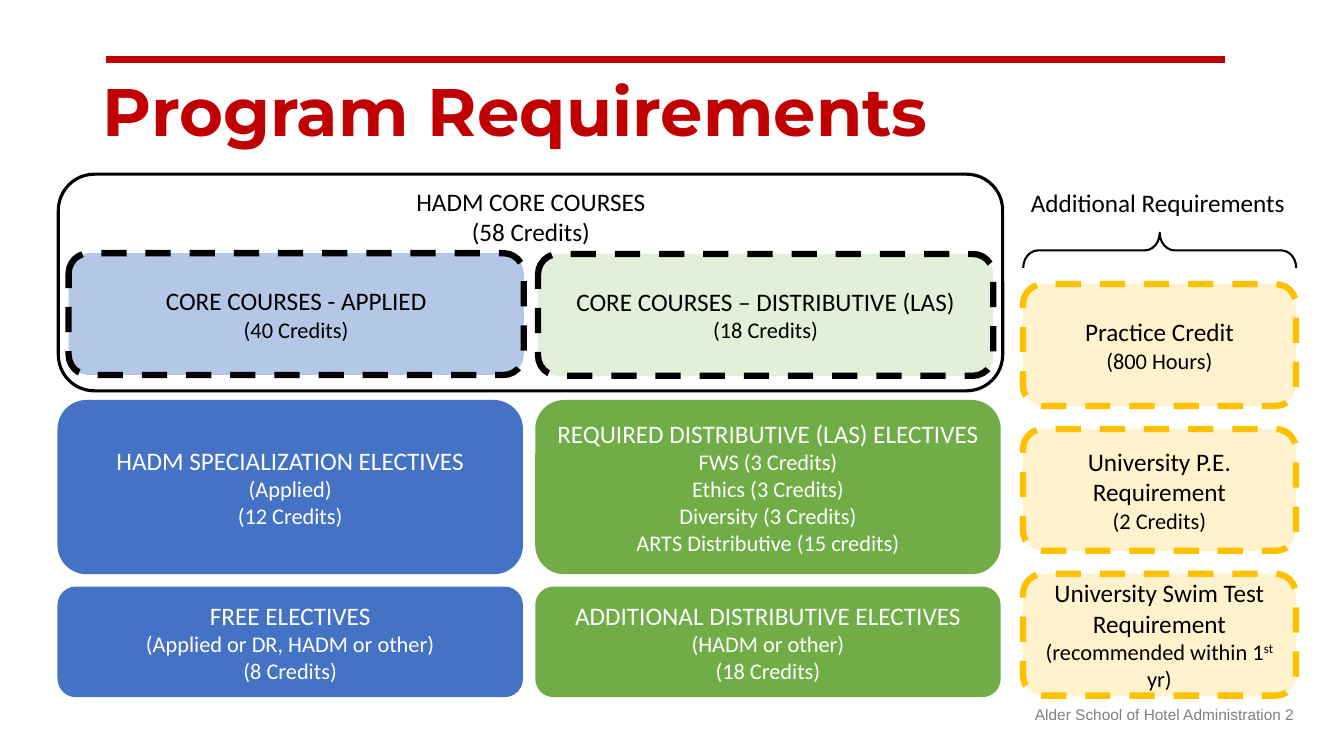
from dataclasses import dataclass

from pptx import Presentation
from pptx.dml.color import RGBColor
from pptx.enum.dml import MSO_LINE
from pptx.enum.shapes import MSO_CONNECTOR, MSO_SHAPE
from pptx.enum.text import MSO_ANCHOR, PP_ALIGN
from pptx.oxml.ns import qn
from pptx.util import Cm, Pt

ROUNDED, BRACE = MSO_SHAPE.ROUNDED_RECTANGLE, MSO_SHAPE.LEFT_BRACE
STRAIGHT = MSO_CONNECTOR.STRAIGHT
DASH = MSO_LINE.DASH
TOP, MIDDLE = MSO_ANCHOR.TOP, MSO_ANCHOR.MIDDLE
LEFT, CENTER, RIGHT = PP_ALIGN.LEFT, PP_ALIGN.CENTER, PP_ALIGN.RIGHT


@dataclass(frozen=True)
class Theme:
    red: str = "C00000"
    black: str = "000000"
    white: str = "FFFFFF"
    gray: str = "808080"
    blue: str = "4472C4"
    pale_blue: str = "B4C7E7"
    green: str = "70AD47"
    pale_green: str = "E2F0D9"
    gold: str = "FFC000"
    pale_gold: str = "FFF2CC"
    title_font: str = "Montserrat"
    body_font: str = "Calibri"
    footer_font: str = "Arial"
    title_size: int = 48
    heading_size: int = 18
    detail_size: int = 16
    footer_size: int = 11


THEME = Theme()


def write(frame, lines, color=THEME.black, font=THEME.body_font, size=THEME.heading_size,
          detail_size=None, bold=False, align=CENTER, anchor=TOP, spacing=None, wrap=True):
    frame.word_wrap = wrap
    frame.vertical_anchor = anchor
    for index, line in enumerate(lines):
        paragraph = frame.add_paragraph() if index else frame.paragraphs[0]
        paragraph.alignment = align
        if spacing:
            paragraph.line_spacing = spacing
        pieces = (line,) if isinstance(line, str) else line
        for position, piece in enumerate(pieces):
            run = paragraph.add_run()
            run.text = piece
            run.font.name = font
            run.font.size = Pt(detail_size if index and detail_size else size)
            run.font.bold = bold
            run.font.color.rgb = RGBColor.from_string(color)
            if position % 2:
                run.font._element.set("baseline", "30000")


class RequirementsSlide:
    def __init__(self, slide, theme):
        self.slide = slide
        self.theme = theme

    def text(self, left, top, width, height, lines, **style):
        label = self.slide.shapes.add_textbox(Cm(left), Cm(top), Cm(width), Cm(height))
        write(label.text_frame, lines, **style)

    def rule(self, left, right, y, color, weight):
        rule = self.slide.shapes.add_connector(STRAIGHT, Cm(left), Cm(y), Cm(right), Cm(y))
        rule.line.color.rgb = RGBColor.from_string(color)
        rule.line.width = Pt(weight)
        rule._element.spPr.append(rule._element.makeelement(qn("a:effectLst"), {}))

    def box(self, left, top, width, height, fill, lines=(), color=THEME.black,
            outline=None, weight=4.5, dash=DASH):
        box = self.slide.shapes.add_shape(ROUNDED, Cm(left), Cm(top), Cm(width), Cm(height))
        box.shadow.inherit = False
        box.fill.solid()
        box.fill.fore_color.rgb = RGBColor.from_string(fill)
        if outline:
            box.line.color.rgb = RGBColor.from_string(outline)
            box.line.width = Pt(weight)
            box.line.dash_style = dash
        else:
            box.line.fill.background()
        write(box.text_frame, lines, color=color, anchor=MIDDLE,
              detail_size=self.theme.detail_size)

    def brace(self, left, top, width, height):
        brace = self.slide.shapes.add_shape(BRACE, Cm(left), Cm(top), Cm(width), Cm(height))
        brace.rotation = 90
        brace.adjustments[0] = 0.42
        brace.shadow.inherit = False
        brace.fill.background()
        brace.line.color.rgb = RGBColor.from_string(self.theme.black)
        brace.line.width = Pt(1.5)


ELECTIVES = (
    (THEME.blue, (
        ("HADM SPECIALIZATION ELECTIVES", "(Applied)", "(12 Credits)"),
        ("FREE ELECTIVES", "(Applied or DR, HADM or other)", "(8 Credits)"),
    )),
    (THEME.green, (
        ("REQUIRED DISTRIBUTIVE (LAS) ELECTIVES", "FWS (3 Credits)", "Ethics (3 Credits)",
         "Diversity (3 Credits)", "ARTS Distributive (15 credits)"),
        ("ADDITIONAL DISTRIBUTIVE ELECTIVES", "(HADM or other)", "(18 Credits)"),
    )),
)
ELECTIVE_ROWS = ((10.08, 4.39), (14.78, 2.79))
CORE_COURSES = (
    (1.73, 6.38, THEME.pale_blue, ("CORE COURSES - APPLIED", "(40 Credits)")),
    (13.56, 6.4, THEME.pale_green, ("CORE COURSES – DISTRIBUTIVE (LAS)", "(18 Credits)")),
)
ADDITIONAL = (
    ("Practice Credit", "(800 Hours)"),
    ("University P.E. Requirement", "(2 Credits)"),
    ("University Swim Test Requirement", ("(recommended within 1", "st ", "yr)")),
)


def main():
    deck = Presentation()
    deck.slide_width, deck.slide_height = Cm(33.87), Cm(19.05)
    page = RequirementsSlide(deck.slides.add_slide(deck.slide_layouts[6]), THEME)

    page.text(2.34, 1.85, 26.26, 3.4, ["Program Requirements"], color=THEME.red,
              font=THEME.title_font, size=THEME.title_size, bold=True, align=LEFT, spacing=0.9)
    page.rule(2.67, 30.86, 1.5, THEME.red, 5)
    page.text(11.23, 17.65, 21.64, 1.02, ["Alder School of Hotel Administration 2"],
              color=THEME.gray, font=THEME.footer_font, size=THEME.footer_size, align=RIGHT)

    page.box(1.47, 4.39, 23.8, 5.46, THEME.white, outline=THEME.black, weight=2.25, dash=None)
    page.text(6.27, 4.57, 14.22, 1.8, ["HADM CORE COURSES", "(58 Credits)"])
    for left, top, fill, lines in CORE_COURSES:
        page.box(left, top, 11.47, 3.07, fill, lines, outline=THEME.black)

    for column, (fill, groups) in enumerate(ELECTIVES):
        for (top, height), lines in zip(ELECTIVE_ROWS, groups):
            page.box(1.45 + column * 12.04, top, 11.73, height, fill, lines, THEME.white)

    page.text(25.73, 4.6, 6.99, 1.02, ["Additional Requirements"], align=LEFT, wrap=False)
    page.brace(28.78, 2.87, 0.89, 6.88)
    for row, lines in enumerate(ADDITIONAL):
        page.box(25.78, 7.16 + row * 3.65, 6.88, 3.07, THEME.pale_gold, lines,
                 outline=THEME.gold)

    deck.save("out.pptx")


if __name__ == "__main__":
    main()
